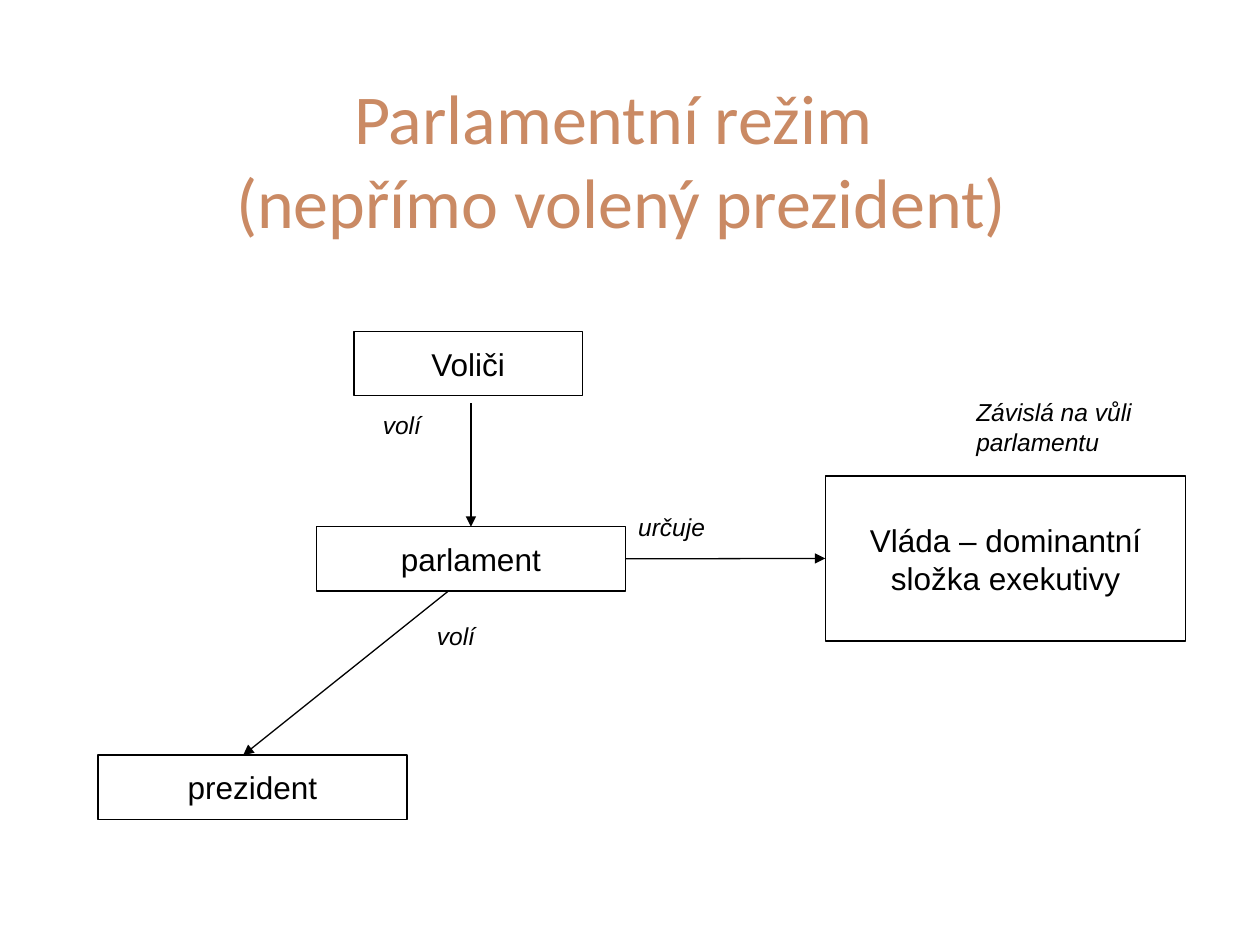
"""Build a slide that charts a parliamentary regime with an indirectly elected president."""
from dataclasses import dataclass

import lxml.etree
import pptx
import pptx.dml.color
import pptx.enum.shapes
import pptx.enum.text
import pptx.oxml.ns
import pptx.shapes.autoshape
import pptx.shapes.connector
import pptx.slide
import pptx.text.text
import pptx.util

Pt = pptx.util.Pt
RGBColor = pptx.dml.color.RGBColor
Align = pptx.enum.text.PP_ALIGN
Anchor = pptx.enum.text.MSO_ANCHOR


@dataclass(frozen=True)
class Theme:
    """Colours, fonts and sizes of the slide."""
    title_color: RGBColor = RGBColor(0xCA, 0x8A, 0x64)
    ink: RGBColor = RGBColor(0, 0, 0)
    title_font: str = "Calibri"
    body_font: str = "Arial"
    title_size: float = 40
    box_size: float = 18
    label_size: float = 14
    line_width: float = 0.75


@dataclass(frozen=True)
class Block:
    """A text with its place in points."""
    text: str
    left: float
    top: float
    width: float
    height: float

    def frame(self) -> tuple:
        """Return left, top, width and height as lengths."""
        return Pt(self.left), Pt(self.top), Pt(self.width), Pt(self.height)


THEME = Theme()
TITLE = Block("Parlamentní režim \v(nepřímo volený prezident)", 22.3, 75.6, 665.3, 30.2)
VOTERS = Block("Voliči", 202.3, 189.3, 130.5, 36.7)
PARLIAMENT = Block("parlament", 180.8, 301, 176.6, 36.7)
GOVERNMENT = Block("Vláda – dominantní složka exekutivy", 471.6, 272, 206, 94.3)
PRESIDENT = Block("prezident", 56, 431.5, 176.6, 36.7)
LABELS = (
    Block("volí", 211.7, 230.4, 57.6, 24),
    Block("určuje", 357.6, 288.7, 84.2, 24),
    Block("Závislá na vůli parlamentu", 550.8, 223.2, 151.2, 41),
    Block("volí", 242.6, 351.4, 80, 24),
)


def style_font(font: pptx.text.text.Font, name: str, size: float, color: RGBColor) -> None:
    """Set typeface, size and colour."""
    font.name = name
    font.size = Pt(size)
    font.color.rgb = color


def add_title(slide: pptx.slide.Slide, block: Block) -> None:
    """Place and format the title placeholder."""
    title = slide.shapes.title
    title.left, title.top, title.width, title.height = block.frame()
    frame = title.text_frame
    frame.text = block.text
    frame.auto_size = pptx.enum.text.MSO_AUTO_SIZE.NONE
    frame.vertical_anchor = Anchor.MIDDLE
    paragraph = frame.paragraphs[0]
    paragraph.alignment = Align.CENTER
    style_font(paragraph.font, THEME.title_font, THEME.title_size, THEME.title_color)


def add_box(slide: pptx.slide.Slide, block: Block) -> pptx.shapes.autoshape.Shape:
    """Draw an outlined box with centred text."""
    shape = slide.shapes.add_shape(pptx.enum.shapes.MSO_SHAPE.RECTANGLE, *block.frame())
    shape.shadow.inherit = False
    shape.fill.background()
    shape.line.color.rgb = THEME.ink
    shape.line.width = Pt(THEME.line_width)
    frame = shape.text_frame
    frame.text = block.text
    frame.word_wrap = True
    frame.vertical_anchor = Anchor.MIDDLE
    paragraph = frame.paragraphs[0]
    paragraph.alignment = Align.CENTER
    style_font(paragraph.font, THEME.body_font, THEME.box_size, THEME.ink)
    return shape


def add_label(slide: pptx.slide.Slide, block: Block) -> None:
    """Write an italic label."""
    frame = slide.shapes.add_textbox(*block.frame()).text_frame
    frame.text = block.text
    frame.word_wrap = True
    frame.vertical_anchor = Anchor.BOTTOM
    font = frame.paragraphs[0].font
    style_font(font, THEME.body_font, THEME.label_size, THEME.ink)
    font.italic = True


def add_arrow(slide: pptx.slide.Slide, start: tuple[float, float],
              end: tuple[float, float]) -> pptx.shapes.connector.Connector:
    """Draw a straight arrow with a triangular head."""
    arrow = slide.shapes.add_connector(
        pptx.enum.shapes.MSO_CONNECTOR.STRAIGHT, *map(Pt, start + end))
    arrow.line.color.rgb = THEME.ink
    arrow.line.width = Pt(THEME.line_width)
    qualify = pptx.oxml.ns.qn
    lxml.etree.SubElement(arrow.line._get_or_add_ln(), qualify("a:tailEnd"), type="triangle")
    lxml.etree.SubElement(arrow._element.spPr, qualify("a:effectLst"))
    return arrow


def main() -> None:
    """Build and save the presentation."""
    presentation = pptx.Presentation()
    presentation.slide_width, presentation.slide_height = Pt(720), Pt(540)
    slide = presentation.slides.add_slide(presentation.slide_layouts[5])
    add_title(slide, TITLE)
    add_box(slide, VOTERS)
    parliament = add_box(slide, PARLIAMENT)
    government = add_box(slide, GOVERNMENT)
    add_box(slide, PRESIDENT)
    for label in LABELS:
        add_label(slide, label)

    election = add_arrow(slide, (269.1, 230.4), (269.1, 301))
    election.end_connect(parliament, 0)
    appointment = add_arrow(slide, (357.4, 319.3), (471.6, 319.3))
    appointment.begin_connect(parliament, 3)
    appointment.end_connect(government, 1)
    add_arrow(slide, (256.3, 337.7), (139, 431.5))
    presentation.save("out.pptx")


if __name__ == "__main__":
    main()
